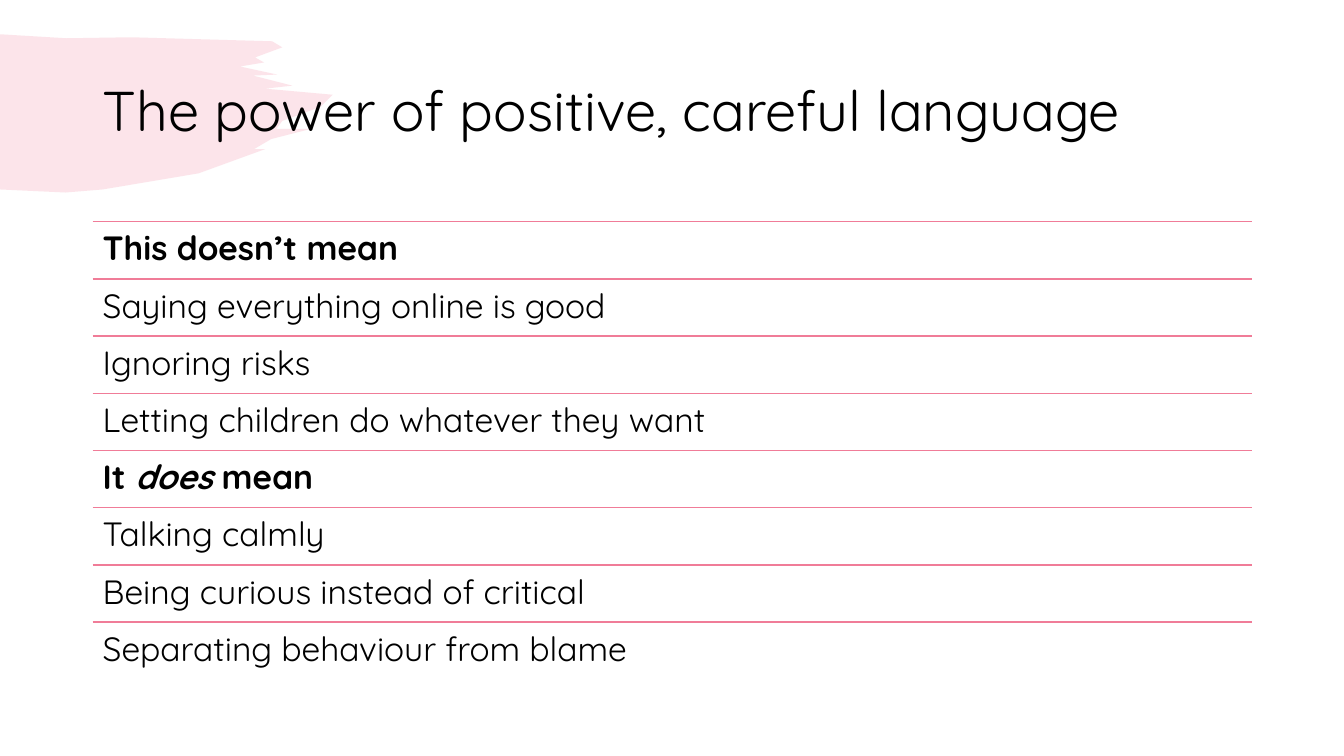
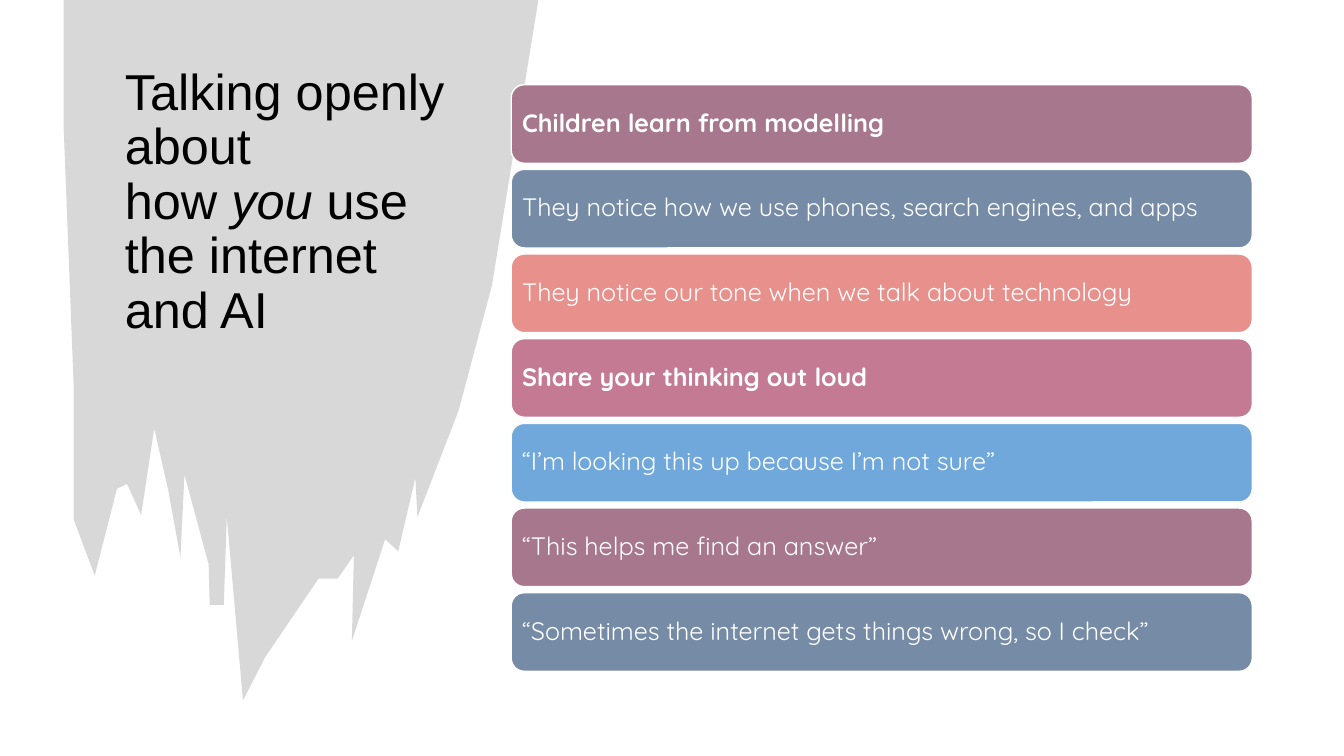
from dataclasses import dataclass

from lxml import etree
from pptx import Presentation
from pptx import util as u
from pptx.dml.color import RGBColor
from pptx.enum import shapes, text
from pptx.oxml.ns import qn


@dataclass(frozen=True)
class Theme:
    ink: str = "000000"
    paper: str = "FFFFFF"
    pink: str = "F07C98"
    charcoal: str = "404040"
    cards: tuple = ("A6778D", "768BA6", "E8908B", "C47A93", "70A8DB")
    sans: str = "Arial"
    rounded: str = "Quicksand"
    wide_title: int = 40
    side_title: int = 36
    row: int = 24
    card: int = 18
    line_spacing: float = 0.9
    rule: int = 1
    brush_alpha: int = 20


@dataclass(frozen=True)
class Box:
    left: float
    top: float
    width: float
    height: float

    def emu(self):
        return [u.Inches(n) for n in (self.left, self.top, self.width, self.height)]

    def rows(self, count, gap=0):
        """Split into equal rows with an equal gap between them."""
        height = (self.height - gap * (count - 1)) / count
        return [Box(self.left, self.top + i * (height + gap), self.width, height)
                for i in range(count)]


THEME = Theme()
PAGE = Box(0, 0, 13.33, 7.5)
NBSP = chr(160)

# Brush outlines, in inches from the corner of the box
SIDE_STROKE = [
    (0, 0.34), (0.66, 0.38), (1.3, 0.37), (2.7, 0.41), (2.8, 0.47), (2.53, 0.57),
    (2.62, 0.62), (2.38, 0.66), (2.75, 0.74), (2.51, 0.75), (2.9, 0.85), (2.63, 0.88),
    (3.3, 0.94), (3.18, 1.06), (2.8, 1.2), (2.74, 1.28), (3.08, 1.28), (2.69, 1.38),
    (2.52, 1.48), (2.63, 1.48), (1.97, 1.72), (1.02, 1.88), (0.65, 1.91), (0, 1.88),
]
DRIPPING_STROKE = [
    (0.63, 0), (5.34, 0), (4.88, 2.83), (4.55, 4.07), (4.14, 5.13), (4.12, 4.74),
    (3.95, 5.47), (3.82, 5.35), (3.49, 6.36), (3.51, 5.51), (3.35, 5.74), (3.16, 5.74),
    (2.63, 6.52), (2.41, 6.95), (2.25, 5.13), (2.22, 6), (2.08, 6), (2.07, 5.6),
    (1.83, 4.71), (1.79, 5.53), (1.67, 4.87), (1.53, 4.25), (1.4, 5.11), (1.26, 4.8),
    (1.16, 4.85), (0.94, 5.71), (0.73, 5.15), (0.73, 3.8), (0.63, 1.23),
]


def fill_solid(shape, colour):
    shape.shadow.inherit = False
    shape.fill.solid()
    shape.fill.fore_color.rgb = RGBColor.from_string(colour)


def write_text(shape, wording, font, size, colour, inset=0.1, bold=False,
               anchor=text.MSO_ANCHOR.MIDDLE):
    """Write one paragraph; the part between asterisks is italic."""
    frame = shape.text_frame
    frame.word_wrap = True
    frame.vertical_anchor = anchor
    frame.margin_left = frame.margin_right = u.Inches(inset)
    frame.margin_top = frame.margin_bottom = u.Inches(inset)
    paragraph = frame.paragraphs[0]
    paragraph.alignment = text.PP_ALIGN.LEFT
    paragraph.line_spacing = THEME.line_spacing
    joined = wording.replace(" *", NBSP + "*").replace("* ", "*" + NBSP)
    for index, part in enumerate(joined.split("*")):
        run = paragraph.add_run()
        run.text = part
        run.font.name = font
        run.font.size = u.Pt(size)
        run.font.bold = bold
        run.font.italic = index % 2 == 1
        run.font.color.rgb = RGBColor.from_string(colour)


def add_brush(slide, box, outline, colour):
    start, *rest = [(u.Inches(box.left + x), u.Inches(box.top + y)) for x, y in outline]
    builder = slide.shapes.build_freeform(*start, scale=1.0)
    builder.add_line_segments(rest)
    brush = builder.convert_to_shape()
    fill_solid(brush, colour)
    brush.line.fill.background()
    solid_fill = brush._element.spPr.find(qn("a:solidFill"))
    alpha = etree.SubElement(solid_fill[0], qn("a:alpha"))
    alpha.set("val", str(THEME.brush_alpha * 1000))


def add_title(slide, box, wording, font, size):
    title = slide.shapes.add_textbox(*box.emu())
    write_text(title, wording, font, size, THEME.ink)


def add_rule(slide, box):
    left, top, width, _ = box.emu()
    rule = slide.shapes.add_connector(shapes.MSO_CONNECTOR.STRAIGHT,
                                      left, top, left + width, top)
    rule.line.color.rgb = RGBColor.from_string(THEME.pink)
    rule.line.width = u.Pt(THEME.rule)
    etree.SubElement(rule._element.spPr, qn("a:effectLst"))


def add_ruled_list(slide, box, items):
    for row, (wording, bold) in zip(box.rows(len(items)), items):
        add_rule(slide, row)
        label = slide.shapes.add_textbox(*row.emu())
        write_text(label, wording, THEME.rounded, THEME.row, THEME.ink, bold=bold,
                   anchor=text.MSO_ANCHOR.TOP)


def add_cards(slide, box, items):
    for index, (row, (wording, bold)) in enumerate(zip(box.rows(len(items), 0.06), items)):
        card = slide.shapes.add_shape(shapes.MSO_SHAPE.ROUNDED_RECTANGLE, *row.emu())
        fill_solid(card, THEME.cards[index % len(THEME.cards)])
        card.line.color.rgb = RGBColor.from_string(THEME.paper)
        card.line.width = u.Pt(THEME.rule)
        # The rounded corners add about 0.04 to the inset
        write_text(card, wording, THEME.rounded, THEME.card, THEME.paper, 0.07, bold)


def build_language_slide(slide):
    add_brush(slide, PAGE, SIDE_STROKE, THEME.pink)
    add_title(slide, Box(0.92, 0.4, 11.5, 1.45), "The power of positive, careful language",
              THEME.rounded, THEME.wide_title)
    add_ruled_list(slide, Box(0.92, 2.2, 11.5, 4.54), [
        ("This doesn’t mean", True),
        ("Saying everything online is good", False),
        ("Ignoring risks", False),
        ("Letting children do whatever they want", False),
        ("It *does* mean", True),
        ("Talking calmly", False),
        ("Being curious instead of critical", False),
        ("Separating behaviour from blame", False),
    ])


def build_modelling_slide(slide):
    add_brush(slide, PAGE, DRIPPING_STROKE, THEME.charcoal)
    add_title(slide, Box(1.14, 0.6, 3.41, 2.83),
              "Talking openly about how *you* use the internet and AI",
              THEME.sans, THEME.side_title)
    add_cards(slide, Box(5.07, 0.84, 7.35, 5.82), [
        ("Children learn from modelling", True),
        ("They notice how we use phones, search engines, and apps", False),
        ("They notice our tone when we talk about technology", False),
        ("Share your thinking out loud", True),
        ("“I’m looking this up because I’m not sure”", False),
        ("“This helps me find an answer”", False),
        ("“Sometimes the internet gets things wrong, so I check”", False),
    ])


def main():
    presentation = Presentation()
    presentation.slide_width = u.Inches(PAGE.width)
    presentation.slide_height = u.Inches(PAGE.height)
    blank = presentation.slide_layouts[6]
    for build in (build_language_slide, build_modelling_slide):
        build(presentation.slides.add_slide(blank))
    presentation.save("out.pptx")


if __name__ == "__main__":
    main()
